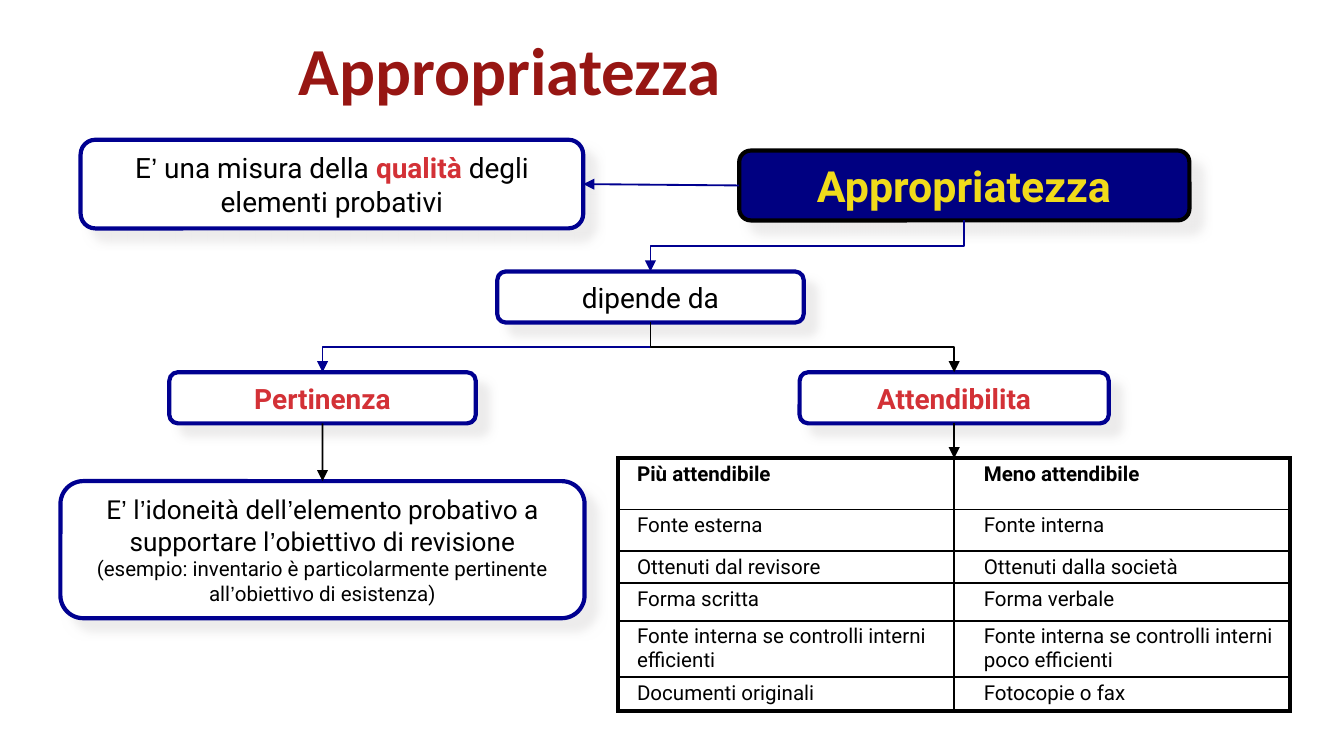
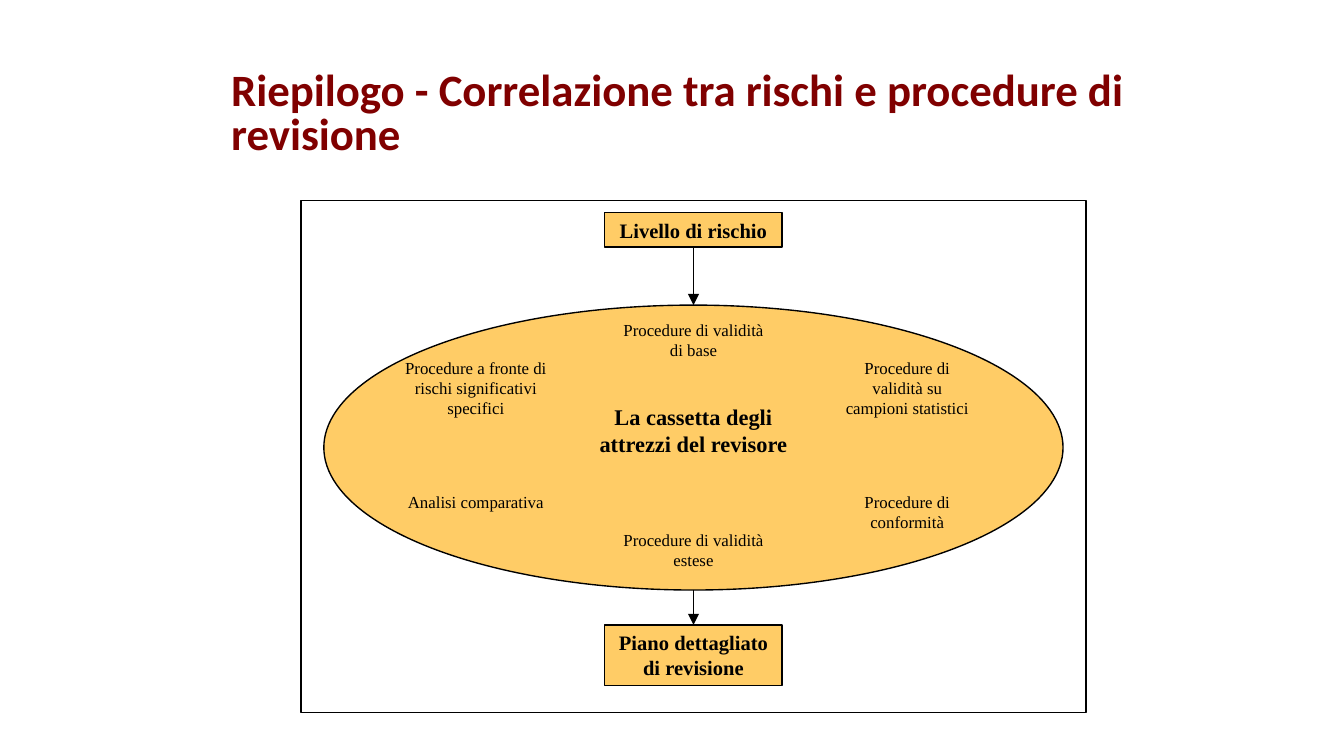
from collections import namedtuple
from dataclasses import dataclass

from lxml.etree import SubElement
from pptx import Presentation
from pptx.dml.color import RGBColor
from pptx.enum.shapes import MSO_CONNECTOR, MSO_SHAPE
from pptx.enum.text import MSO_ANCHOR, MSO_AUTO_SIZE, PP_ALIGN
from pptx.oxml import parse_xml
from pptx.oxml.ns import nsdecls, qn
from pptx.util import Inches, Pt

Box = namedtuple("Box", "left top width height")
TOP, LEFT, BOTTOM, RIGHT = range(4)


@dataclass(frozen=True)
class Theme:
    white: str = "FFFFFF"
    black: str = "000000"
    outline: str = "000090"
    navy: str = "000081"
    yellow: str = "F0DB1B"
    red: str = "D33136"
    title_red: str = "971613"
    maroon: str = "800000"
    amber: str = "FFCC66"
    shadow: str = "E7E6E6"
    title_font: str = "Calibri"
    body_font: str = "Roboto"
    quote_font: str = "Arial"
    serif_font: str = "Times New Roman"
    title_size: int = 36
    long_title_size: int = 24
    key_size: int = 23
    node_size: int = 15
    definition_size: int = 14
    small_size: int = 11
    center_size: int = 12
    tool_size: int = 9
    thick: float = 2.25
    thin: float = 1
    hairline: float = 0.75


THEME = Theme()


def assign(target, **values):
    for name, value in values.items():
        setattr(target, name, value)


def inches(box):
    return [Inches(length) for length in box]


def inside(box, left, top, width, height):
    return Box(box.left + left, box.top + top, width, height)


def add_span(para, text, color=THEME.black, size=THEME.small_size, font=THEME.body_font, bold=False):
    span = para.add_run()
    span.text = text
    assign(span.font, name=font, size=Pt(size), bold=bold)
    span.font.color.rgb = RGBColor.from_string(color)


def add_text(para, text, **style):
    """Write text, setting each curly apostrophe in the quote font."""
    for index, piece in enumerate(text.split("’")):
        if index:
            add_span(para, "’", **{**style, "font": THEME.quote_font})
        if piece:
            add_span(para, piece, **style)


def write(frame, paragraphs, side=0.08, edge=0.04, anchor=MSO_ANCHOR.TOP, align=PP_ALIGN.CENTER):
    """Fill a frame with paragraphs, each a list of (text, style) pairs."""
    assign(frame, word_wrap=True, auto_size=MSO_AUTO_SIZE.NONE, vertical_anchor=anchor,
           margin_left=Inches(side), margin_right=Inches(side),
           margin_top=Inches(edge), margin_bottom=Inches(edge))
    for index, parts in enumerate(paragraphs):
        para = frame.add_paragraph() if index else frame.paragraphs[0]
        para.alignment = align
        for text, style in parts:
            add_text(para, text, **style)


def add_title(page, box, text, color, size, spacing):
    title = page.shapes.title
    assign(title, **dict(zip(Box._fields, inches(box))))
    title.fill.solid()
    title.fill.fore_color.rgb = RGBColor.from_string(THEME.white)
    style = dict(color=color, size=size, font=THEME.title_font, bold=True)
    write(title.text_frame, [[(text, style)]], align=PP_ALIGN.LEFT)
    title.text_frame.paragraphs[0].line_spacing = spacing


def add_figure(shapes, kind, box, fill, line, weight):
    figure = shapes.add_shape(kind, *inches(box))
    figure.shadow.inherit = False
    if fill:
        figure.fill.solid()
        figure.fill.fore_color.rgb = RGBColor.from_string(fill)
    else:
        figure.fill.background()
    figure.line.color.rgb = RGBColor.from_string(line)
    figure.line.width = Pt(weight)
    return figure


def add_node(page, box, paragraphs, fill=THEME.white, line=THEME.outline):
    """Add a rounded box with a soft shadow down to the right."""
    node = add_figure(page.shapes, MSO_SHAPE.ROUNDED_RECTANGLE, box, fill, line, THEME.thick)
    node._element.spPr.find(qn("a:effectLst")).append(parse_xml(
        f'<a:outerShdw {nsdecls("a")} blurRad="{Pt(5)}" dist="{Pt(8.5)}" dir="2700000"'
        f' algn="ctr" rotWithShape="0"><a:srgbClr val="{THEME.shadow}">'
        '<a:alpha val="75000"/></a:srgbClr></a:outerShdw>'))
    write(node.text_frame, paragraphs, anchor=MSO_ANCHOR.MIDDLE)
    return node


def style_arrow(arrow, color, weight):
    arrow.line.color.rgb = RGBColor.from_string(color)
    arrow.line.width = Pt(weight)
    properties = arrow._element.spPr
    SubElement(properties.find(qn("a:ln")), qn("a:tailEnd"), type="triangle")
    SubElement(properties, qn("a:effectLst"))


def add_arrow(page, start, end, color=THEME.black, weight=THEME.thin):
    """Draw a straight arrow; each end is a (shape, side) pair or an (x, y) point in inches."""
    ends = [(0, 0) if hasattr(spot[0], "shape_id") else inches(spot) for spot in (start, end)]
    arrow = page.shapes.add_connector(MSO_CONNECTOR.STRAIGHT, *ends[0], *ends[1])
    if hasattr(start[0], "shape_id"):
        arrow.begin_connect(*start)
    if hasattr(end[0], "shape_id"):
        arrow.end_connect(*end)
    style_arrow(arrow, color, weight)


def add_elbow(page, upper, lower, color):
    """Draw a bent arrow that leaves downwards and enters from above."""
    arrow = page.shapes.add_connector(MSO_CONNECTOR.ELBOW, 0, 0, 0, 0)
    arrow.begin_connect(upper, BOTTOM)
    arrow.end_connect(lower, TOP)
    start_x, end_x = (node.left + node.width // 2 for node in (upper, lower))
    start_y, end_y = upper.top + upper.height, lower.top
    drop, reach = end_y - start_y, abs(end_x - start_x)
    assign(arrow, left=(start_x + end_x - drop) // 2, top=(start_y + end_y - reach) // 2,
           width=drop, height=reach)
    rightwards = end_x > start_x
    frame = arrow._element.spPr.find(qn("a:xfrm"))
    for name, value in dict(rot=270 * 60000 if rightwards else 90 * 60000,
                            flipH=int(rightwards), flipV=0).items():
        frame.set(name, str(value))
    style_arrow(arrow, color, THEME.thin)


def set_borders(cell, weights):
    properties = cell._tc.get_or_add_tcPr()
    for index, (side, weight) in enumerate(weights.items()):
        properties.insert(index, parse_xml(
            f'<a:ln{side} {nsdecls("a")} w="{Pt(weight)}"><a:solidFill>'
            f'<a:srgbClr val="{THEME.black}"/></a:solidFill></a:ln{side}>'))


def add_reliability_table(page, box):
    rows = [
        ("Più attendibile", "Meno attendibile"),
        ("Fonte esterna", "Fonte interna"),
        ("Ottenuti dal revisore", "Ottenuti dalla società"),
        ("Forma scritta", "Forma verbale"),
        ("Fonte interna se controlli interni efficienti",
         "Fonte interna se controlli interni poco efficienti"),
        ("Documenti originali", "Fotocopie o fax"),
    ]
    heights = (0.38, 0.31, 0.24, 0.28, 0.42, 0.25)
    indents = (0.1, 0.18)
    table = page.shapes.add_table(len(rows), len(indents), *inches(box)).table
    assign(table, first_row=False, horz_banding=False)
    for column in table.columns:
        column.width = Inches(box.width / len(indents))
    for row, (texts, height) in enumerate(zip(rows, heights)):
        table.rows[row].height = Inches(height)
        for column, (text, indent) in enumerate(zip(texts, indents)):
            cell = table.cell(row, column)
            assign(cell, margin_left=Inches(0.04), margin_right=Inches(0.07),
                   margin_top=Inches(0.03), margin_bottom=Inches(0.03))
            cell.fill.background()
            outer = dict(L=column == 0, R=column == len(indents) - 1,
                         T=row == 0, B=row == len(rows) - 1)
            set_borders(cell, {side: THEME.thick if edge else THEME.thin
                               for side, edge in outer.items()})
            para = cell.text_frame.paragraphs[0]
            para.alignment = PP_ALIGN.JUSTIFY if row < 4 else PP_ALIGN.LEFT
            para._p.get_or_add_pPr().set("marL", str(Inches(indent)))
            add_text(para, text, bold=row == 0)


def add_quality_diagram(page, box):
    plain = dict(size=THEME.node_size)
    strong = dict(plain, color=THEME.red, bold=True)
    quality = add_node(page, inside(box, 0.15, 0, 3.74, 0.66), [
        [("E’ una misura della ", plain), ("qualità", strong), (" degli elementi probativi", plain)]])
    key = add_node(page, inside(box, 5.05, 0.08, 3.35, 0.52), [
        [("Appropriatezza", dict(color=THEME.yellow, size=THEME.key_size, bold=True))]],
        fill=THEME.navy, line=THEME.black)
    depends = add_node(page, inside(box, 3.25, 0.98, 2.28, 0.38), [[("dipende da", plain)]])
    relevance = add_node(page, inside(box, 0.81, 1.73, 2.28, 0.38), [[("Pertinenza", strong)]])
    reliability = add_node(page, inside(box, 5.5, 1.73, 2.3, 0.38), [[("Attendibilita", strong)]])
    definition = add_node(page, inside(box, 0, 2.54, 3.9, 1.02), [
        [("E’ l’idoneità dell’elemento probativo a supportare l’obiettivo di revisione",
          dict(size=THEME.definition_size))],
        [("(esempio: inventario è particolarmente pertinente all’obiettivo di esistenza)", {})]])
    grid = inside(box, 4.15, 2.37, 5, 1.88)
    add_reliability_table(page, grid)

    add_arrow(page, (key, LEFT), (quality, RIGHT), THEME.outline)
    add_elbow(page, key, depends, THEME.outline)
    add_elbow(page, depends, relevance, THEME.outline)
    add_elbow(page, depends, reliability, THEME.black)
    add_arrow(page, (relevance, BOTTOM), (definition, TOP))
    add_arrow(page, (reliability, BOTTOM), (grid.left + grid.width / 2, grid.top))


def add_toolbox(page, box):
    """Add the ellipse with the auditor's procedures set around its centre."""
    group = page.shapes.add_group_shape()
    add_figure(group.shapes, MSO_SHAPE.OVAL, box, THEME.amber, THEME.black, THEME.hairline)
    tool = dict(size=THEME.tool_size, font=THEME.serif_font)
    center = dict(size=THEME.center_size, font=THEME.serif_font, bold=True)
    labels = [  # text, centre offset, top, width, height, style
        ("Procedure di validità di base", 0, 0.06, 1.33, 0.4, tool),
        ("Procedure di validità su campioni statistici", 1.59, 0.34, 1.17, 0.56, tool),
        ("Procedure di conformità", 1.59, 1.34, 1.08, 0.4, tool),
        ("Procedure di validità estese", 0, 1.62, 1.33, 0.4, tool),
        ("Analisi comparativa", -1.62, 1.34, 1.33, 0.25, tool),
        ("Procedure a fronte di rischi significativi specifici", -1.62, 0.34, 1.33, 0.56, tool),
        ("La cassetta degli attrezzi del revisore", 0, 0.68, 1.67, 0.5, center),
    ]
    for text, offset, top, width, height, style in labels:
        left = (box.width - width) / 2 + offset
        label = group.shapes.add_textbox(*inches(inside(box, left, top, width, height)))
        write(label.text_frame, [[(text, style)]], side=0.1, edge=0.05)


def add_risk_flow(page, box):
    add_figure(page.shapes, MSO_SHAPE.RECTANGLE, box, None, THEME.black, THEME.hairline)
    toolbox = inside(box, 0.17, 0.78, 5.5, 2.12)
    add_toolbox(page, toolbox)
    style = dict(font=THEME.serif_font, bold=True)
    steps = []
    for text, top, height in (("Livello di rischio", 0.09, 0.26),
                              ("Piano dettagliato di revisione", 3.16, 0.45)):
        step = add_figure(page.shapes, MSO_SHAPE.RECTANGLE, inside(box, 2.26, top, 1.32, height),
                          THEME.amber, THEME.black, THEME.hairline)
        write(step.text_frame, [[(text, style)]], side=0.07)
        steps.append(step)
    level, plan = steps
    axis = toolbox.left + toolbox.width / 2
    add_arrow(page, (level, BOTTOM), (axis, toolbox.top), weight=THEME.hairline)
    add_arrow(page, (axis, toolbox.top + toolbox.height), (plan, TOP), weight=THEME.hairline)


def main():
    deck = Presentation()
    assign(deck, slide_width=Inches(10), slide_height=Inches(10) * 9 // 16)
    title_only = deck.slide_layouts[5]

    page = deck.slides.add_slide(title_only)
    add_title(page, Box(2.14, 0.24, 3.65, 0.38), "Appropriatezza",
              THEME.title_red, THEME.title_size, 0.9)
    add_quality_diagram(page, Box(0.45, 1.04, 9.15, 4.25))

    page = deck.slides.add_slide(title_only)
    add_title(page, Box(1.64, 0.5, 7.1, 0.74),
              "Riepilogo - Correlazione tra rischi e procedure di revisione",
              THEME.maroon, THEME.long_title_size, 0.8)
    add_risk_flow(page, Box(2.24, 1.49, 5.84, 3.81))

    deck.save("out.pptx")


if __name__ == "__main__":
    main()
